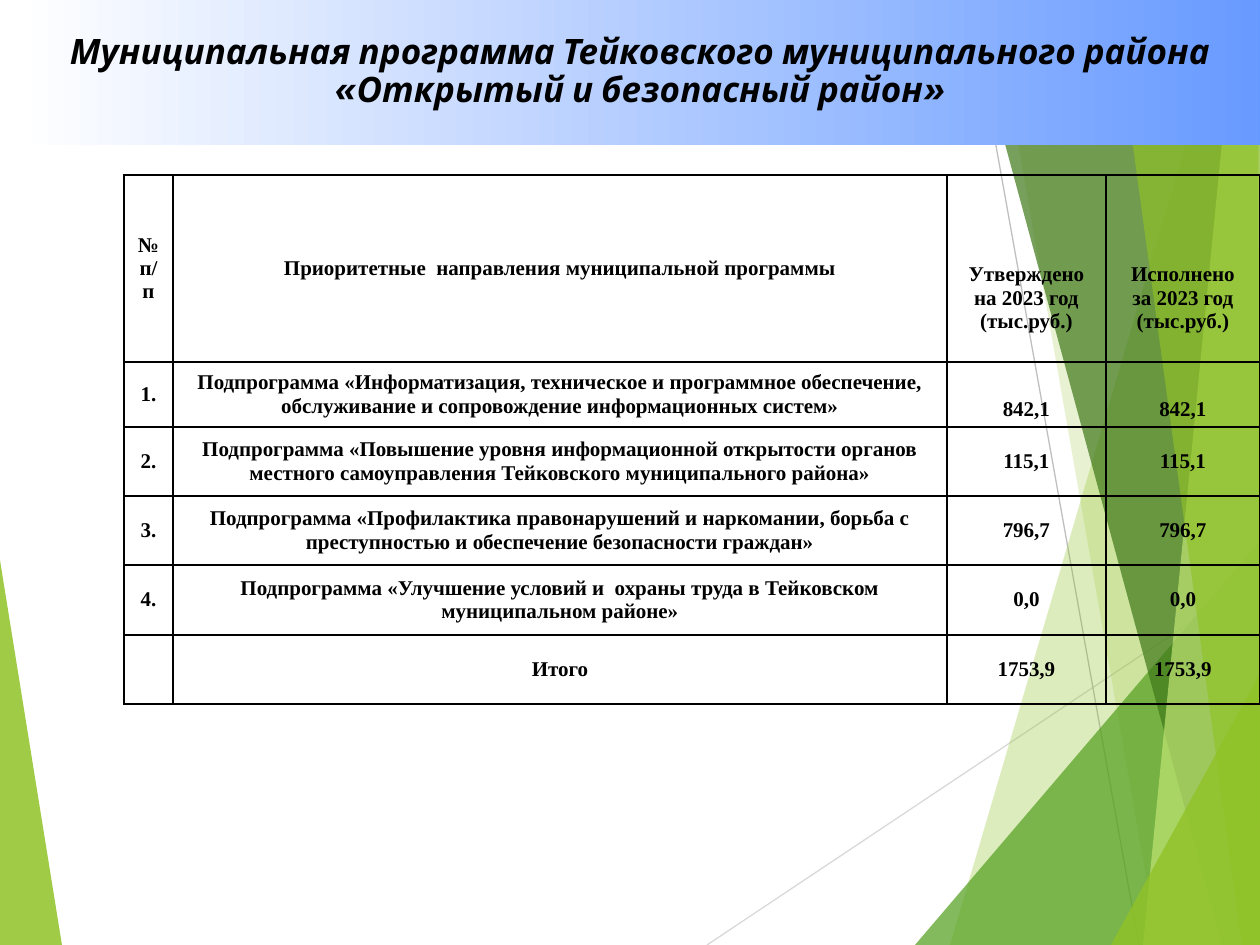
from lxml.etree import SubElement
from pptx import Presentation
from pptx.dml.color import RGBColor
from pptx.enum.shapes import MSO_CONNECTOR
from pptx.enum.text import MSO_ANCHOR, PP_ALIGN
from pptx.oxml import parse_xml
from pptx.oxml.ns import nsdecls, qn
from pptx.util import Emu, Pt

SCALE = 914400 / 126
W, H = 1260, 945

BLACK = RGBColor(0x00, 0x00, 0x00)
WHITE = RGBColor(0xFF, 0xFF, 0xFF)
BLUE = RGBColor(0x66, 0x99, 0xFF)
LIME = RGBColor(0x90, 0xC2, 0x26)
GREEN = RGBColor(0x54, 0xA0, 0x21)
DARK_GREEN = RGBColor(0x3F, 0x78, 0x19)
PALE_LIME = RGBColor(0xC0, 0xE4, 0x74)
GRAY = RGBColor(0xBF, 0xBF, 0xBF)
LIGHT_GRAY = RGBColor(0xD9, 0xD9, 0xD9)

RAYS = [
    ((707, H), (W, 576), LIGHT_GRAY),
    ((970, 0), (1139, H), GRAY),
]
FACETS = [
    ([(0, 560), (62, H), (0, H)], LIME, 85),
    ([(1228, 0), (950, H), (W, H), (W, 0)], LIME, 30),
    ([(993, 0), (1158, H), (W, H), (W, 0)], LIME, 20),
    ([(915, H), (W, 541), (W, H)], GREEN, 72),
    ([(966, 0), (1222, H), (W, H), (W, 0)], DARK_GREEN, 70),
    ([(1236, 0), (1143, H), (W, H), (W, 0)], PALE_LIME, 70),
    ([(1113, 0), (1242, H), (W, H), (1258, 0)], LIME, 65),
    ([(1111, H), (W, 674), (W, H)], LIME, 80),
]

TITLE = ("Муниципальная программа Тейковского муниципального района\n"
         "«Открытый и безопасный район»")
COLS = [49, 774, 159, 154]
ROWS = [187, 65, 69, 69, 70, 69]
CELLS = [
    ["№\nп/п", "Приоритетные  направления муниципальной программы",
     "Утверждено\nна 2023 год\n(тыс.руб.)", "Исполнено\nза 2023 год\n(тыс.руб.)"],
    ["1.", "Подпрограмма «Информатизация, техническое и программное обеспечение, "
     "обслуживание и сопровождение информационных систем»", "842,1", "842,1"],
    ["2.", "Подпрограмма «Повышение уровня информационной открытости органов "
     "местного самоуправления Тейковского муниципального района»", "115,1", "115,1"],
    ["3.", "Подпрограмма «Профилактика правонарушений и наркомании, борьба с "
     "преступностью и обеспечение безопасности граждан»", "796,7", "796,7"],
    ["4.", "Подпрограмма «Улучшение условий и  охраны труда в Тейковском "
     "муниципальном районе»", "0,0", "0,0"],
    ["", "Итого", "1753,9", "1753,9"],
]


def px(n):
    return Emu(round(n * SCALE))


def add_ray(s, start, end, color):
    line = s.shapes.add_connector(MSO_CONNECTOR.STRAIGHT, *map(px, start + end))
    line.line.color.rgb = color
    line.line.width = Pt(0.75)
    SubElement(line._element.spPr, qn("a:effectLst"))


def add_facet(s, points, color, opacity):
    builder = s.shapes.build_freeform(*points[0], scale=SCALE)
    builder.add_line_segments(points[1:], close=True)
    sp = builder.convert_to_shape()
    sp.shadow.inherit = False
    sp.line.fill.background()
    sp.fill.solid()
    sp.fill.fore_color.rgb = color
    rgb = sp._element.spPr.find(".//" + qn("a:srgbClr"))
    SubElement(rgb, qn("a:alpha"), val=str(opacity * 1000))


def format_text(tf, font, size, italic=False):
    for p in tf.paragraphs:
        p.alignment = PP_ALIGN.CENTER
        for r in p.runs:
            r.font.name = font
            r.font.size = Pt(size)
            r.font.bold = True
            r.font.italic = italic
            r.font.color.rgb = BLACK


def add_borders(cell):
    tc_pr = cell._tc.get_or_add_tcPr()
    for i, side in enumerate("LRTB"):
        tc_pr.insert(i, parse_xml(
            f'<a:ln{side} {nsdecls("a")} w="12700"><a:solidFill>'
            f'<a:srgbClr val="{BLACK}"/></a:solidFill></a:ln{side}>'))


def add_program_table(s):
    table = s.shapes.add_table(len(ROWS), len(COLS), px(124), px(175),
                               px(sum(COLS)), px(sum(ROWS))).table
    table.first_row = table.horz_banding = False
    for col, width in zip(table.columns, COLS):
        col.width = px(width)
    for i, (row, height) in enumerate(zip(table.rows, ROWS)):
        row.height = px(height)
        for j, cell in enumerate(row.cells):
            cell.text = CELLS[i][j]
            cell.fill.background()
            low = i < 2 and j > 1
            cell.vertical_anchor = MSO_ANCHOR.BOTTOM if low else MSO_ANCHOR.MIDDLE
            if low and i == 0:
                cell.margin_bottom = px(29)
            format_text(cell.text_frame, "Times New Roman", 12)
            add_borders(cell)


def format_title(s):
    title = s.shapes.title
    s.shapes._spTree.append(title._element)
    title.left, title.top, title.width, title.height = map(px, (15, 0, W, 145))
    title.fill.gradient()
    title.fill.gradient_angle = 0
    for stop, color in zip(title.fill.gradient_stops, (WHITE, BLUE)):
        stop.color.rgb = color
    tf = title.text_frame
    tf.text = TITLE
    tf.word_wrap = True
    tf.vertical_anchor = MSO_ANCHOR.MIDDLE
    tf.margin_left, tf.margin_right = 0, px(50)
    format_text(tf, "Cabin", 20, italic=True)
    for p in tf.paragraphs:
        p.line_spacing = 0.9
    tf.paragraphs[0]._p.get_or_add_pPr().set("marL", str(px(40)))


def main():
    prs = Presentation()
    prs.slide_width, prs.slide_height = px(W), px(H)
    s = prs.slides.add_slide(prs.slide_layouts[5])
    for ray in RAYS:
        add_ray(s, *ray)
    for facet in FACETS:
        add_facet(s, *facet)
    add_program_table(s)
    format_title(s)
    prs.save("out.pptx")


if __name__ == "__main__":
    main()
